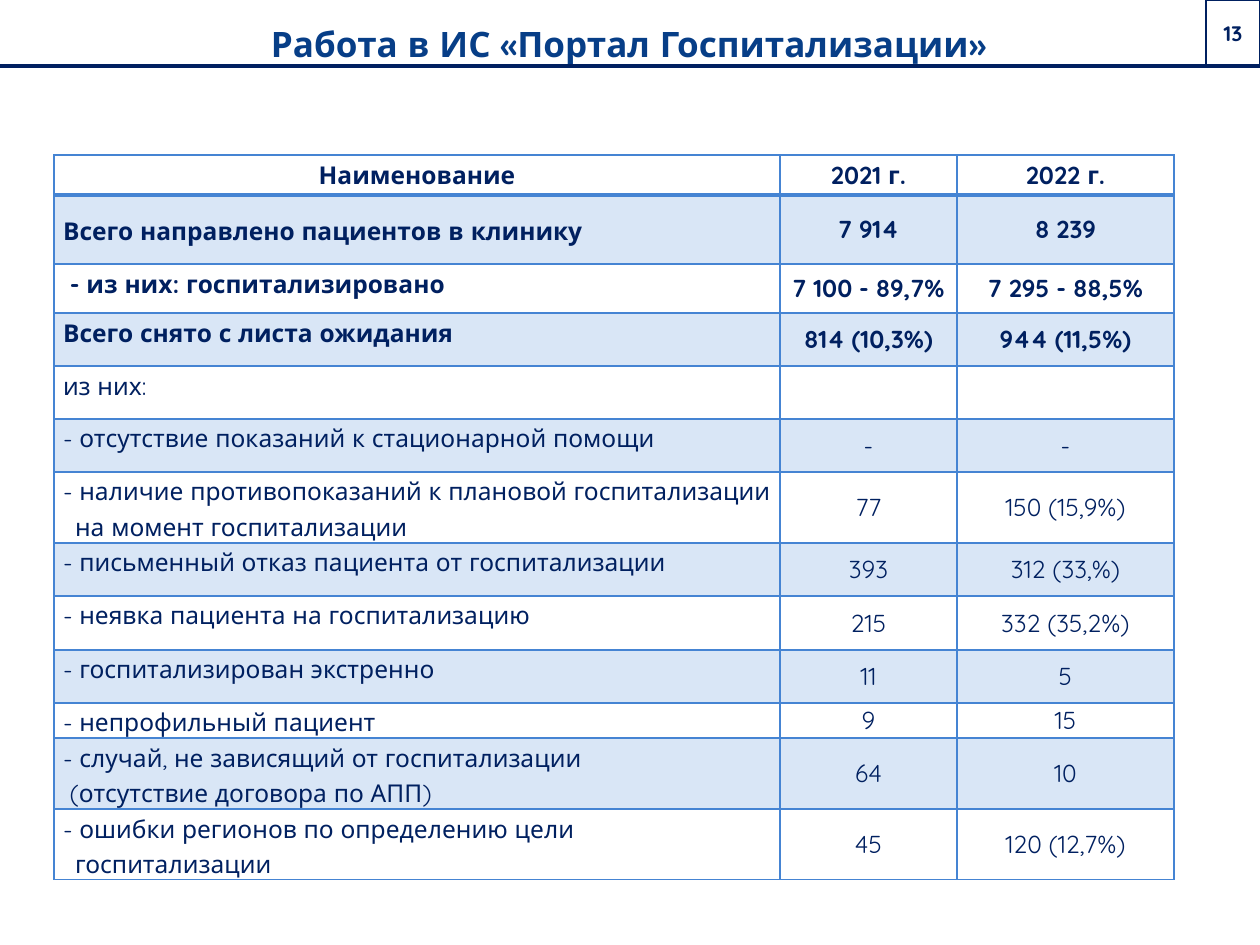
from dataclasses import dataclass

from lxml.etree import SubElement
from pptx import Presentation
from pptx.dml.color import RGBColor
from pptx.enum.shapes import MSO_CONNECTOR, MSO_SHAPE
from pptx.enum.text import MSO_ANCHOR, MSO_AUTO_SIZE, PP_ALIGN
from pptx.oxml import parse_xml
from pptx.oxml.ns import nsdecls, qn
from pptx.util import Emu, Pt

PIXELS_PER_INCH = 126


def px(length):
    return Emu(round(length * 914400 / PIXELS_PER_INCH))


@dataclass(frozen=True)
class Theme:
    font: str = "Quicksand"
    title_color: str = "073E87"
    navy: str = "002060"
    blue: str = "4584D3"
    band_opacity: int = 20
    title_size: int = 20
    table_size: int = 14
    number_size: int = 12
    line_spacing: float = 1.15


@dataclass(frozen=True)
class Row:
    height: int
    label: str
    values: tuple
    bold: bool = False


COLUMN_WIDTHS = (726, 177, 217)
ROWS = (
    Row(40, "Наименование", ("2021 г.", "2022 г."), True),
    Row(69, "Всего направлено пациентов в клинику", ("7 914", "8 239"), True),
    Row(49, " - из них: госпитализировано", ("7 100 - 89,7%", "7 295 - 88,5%"), True),
    Row(53, "Всего снято с листа ожидания", ("814 (10,3%)", "944 (11,5%)"), True),
    Row(53, "из них:", ("", "")),
    Row(53, "- отсутствие показаний к стационарной помощи", ("-", "-")),
    Row(71, "- наличие противопоказаний к плановой госпитализации на момент госпитализации",
        ("77", "150 (15,9%)")),
    Row(53, "- письменный отказ пациента от госпитализации", ("393", "312 (33,%)")),
    Row(54, "- неявка пациента на госпитализацию", ("215", "332 (35,2%)")),
    Row(53, "- госпитализирован экстренно", ("11", "5")),
    Row(35, "- непрофильный пациент", ("9", "15")),
    Row(71, "- случай, не зависящий от госпитализации\n (отсутствие договора по АПП)",
        ("64", "10")),
    Row(70, "- ошибки регионов по определению цели госпитализации", ("45", "120 (12,7%)")),
)


class SlideBuilder:
    def __init__(self, presentation, theme):
        self.theme = theme
        self.slide = presentation.slides.add_slide(presentation.slide_layouts[5])

    def format_text(self, text_frame, size, color, bold, alignment, spacing=None):
        for paragraph in text_frame.paragraphs:
            paragraph.alignment = alignment
            paragraph.line_spacing = spacing
            for run in paragraph.runs:
                run.font.name = self.theme.font
                run.font.size = Pt(size)
                run.font.bold = bold
                run.font.color.rgb = RGBColor.from_string(color)

    def title(self, text, left, top, width, height):
        shape = self.slide.shapes.title
        shape.left, shape.top, shape.width, shape.height = map(px, (left, top, width, height))
        frame = shape.text_frame
        frame.text = text
        frame.auto_size = MSO_AUTO_SIZE.NONE
        frame.vertical_anchor = MSO_ANCHOR.MIDDLE
        self.format_text(frame, self.theme.title_size, self.theme.title_color, True,
                         PP_ALIGN.CENTER, self.theme.line_spacing)
        frame.paragraphs[0].space_before = Pt(10)

    def table(self, rows, column_widths, left, top):
        table = self.slide.shapes.add_table(
            len(rows), len(column_widths), px(left), px(top),
            px(sum(column_widths)), px(sum(row.height for row in rows))).table
        table.first_row = table.horz_banding = False
        for column, width in zip(table.columns, column_widths):
            column.width = px(width)
        for row_index, row in enumerate(rows):
            table.rows[row_index].height = px(row.height)
            for column_index, text in enumerate((row.label, *row.values)):
                self.cell(table.cell(row_index, column_index), text, row.bold,
                          row_index, column_index)

    def cell(self, cell, text, bold, row_index, column_index):
        is_header, is_label = row_index == 0, column_index == 0
        cell.margin_left = cell.margin_right = px(9)
        cell.margin_top = cell.margin_bottom = 0
        at_top = is_header or (is_label and row_index != 1)
        cell.vertical_anchor = MSO_ANCHOR.TOP if at_top else MSO_ANCHOR.MIDDLE
        cell.text_frame.text = text
        self.format_text(cell.text_frame, self.theme.table_size, self.theme.navy, bold,
                         PP_ALIGN.LEFT if is_label and not is_header else PP_ALIGN.CENTER,
                         self.theme.line_spacing if is_header or is_label else None)
        for paragraph in cell.text_frame.paragraphs:
            if text.startswith("- ") and paragraph.text.startswith("- "):
                self.hanging_indent(paragraph, 12)
        if row_index % 2:
            self.band_fill(cell)
        else:
            cell.fill.background()
        self.borders(cell, top=2 if row_index == 1 else 1, bottom=2 if is_header else 1)

    def hanging_indent(self, paragraph, indent):
        properties = paragraph._p.get_or_add_pPr()
        properties.set("marL", str(px(indent)))
        properties.set("indent", str(-px(indent)))

    def band_fill(self, cell):
        cell.fill.solid()
        cell.fill.fore_color.rgb = RGBColor.from_string(self.theme.blue)
        color = cell._tc.tcPr.find(f"{qn('a:solidFill')}/{qn('a:srgbClr')}")
        SubElement(color, qn("a:alpha"), val=str(self.theme.band_opacity * 1000))

    def borders(self, cell, top, bottom):
        sides = (("lnL", 1), ("lnR", 1), ("lnT", top), ("lnB", bottom))
        for position, (side, width) in enumerate(sides):
            cell._tc.get_or_add_tcPr().insert(position, parse_xml(
                f'<a:{side} {nsdecls("a")} w="{Pt(width)}"><a:solidFill>'
                f'<a:srgbClr val="{self.theme.blue}"/></a:solidFill></a:{side}>'))

    def rule(self, left, right, y):
        connector = self.slide.shapes.add_connector(
            MSO_CONNECTOR.STRAIGHT, px(left), px(y), px(right), px(y))
        connector.line.color.rgb = RGBColor.from_string(self.theme.navy)
        connector.line.width = Pt(2.25)
        SubElement(connector._element.spPr, qn("a:effectLst"))

    def page_number(self, text, left, top, width, height):
        shape = self.slide.shapes.add_shape(
            MSO_SHAPE.ACTION_BUTTON_CUSTOM, *map(px, (left, top, width, height)))
        shape.shadow.inherit = False
        shape.fill.background()
        shape.line.color.rgb = RGBColor.from_string(self.theme.navy)
        shape.line.width = Pt(1)
        shape.text_frame.text = text
        shape.text_frame.vertical_anchor = MSO_ANCHOR.MIDDLE
        self.format_text(shape.text_frame, self.theme.number_size, self.theme.navy,
                         True, PP_ALIGN.CENTER)


def main():
    presentation = Presentation()
    presentation.slide_width, presentation.slide_height = px(1260), px(945)
    builder = SlideBuilder(presentation, Theme())
    builder.title("Работа в ИС «Портал Госпитализации»", 23, 6, 1211, 69)
    builder.table(ROWS, COLUMN_WIDTHS, 54, 155)
    builder.rule(0, 1260, 66)
    builder.page_number("13", 1206, 0, 54, 66)
    presentation.save("out.pptx")


if __name__ == "__main__":
    main()
